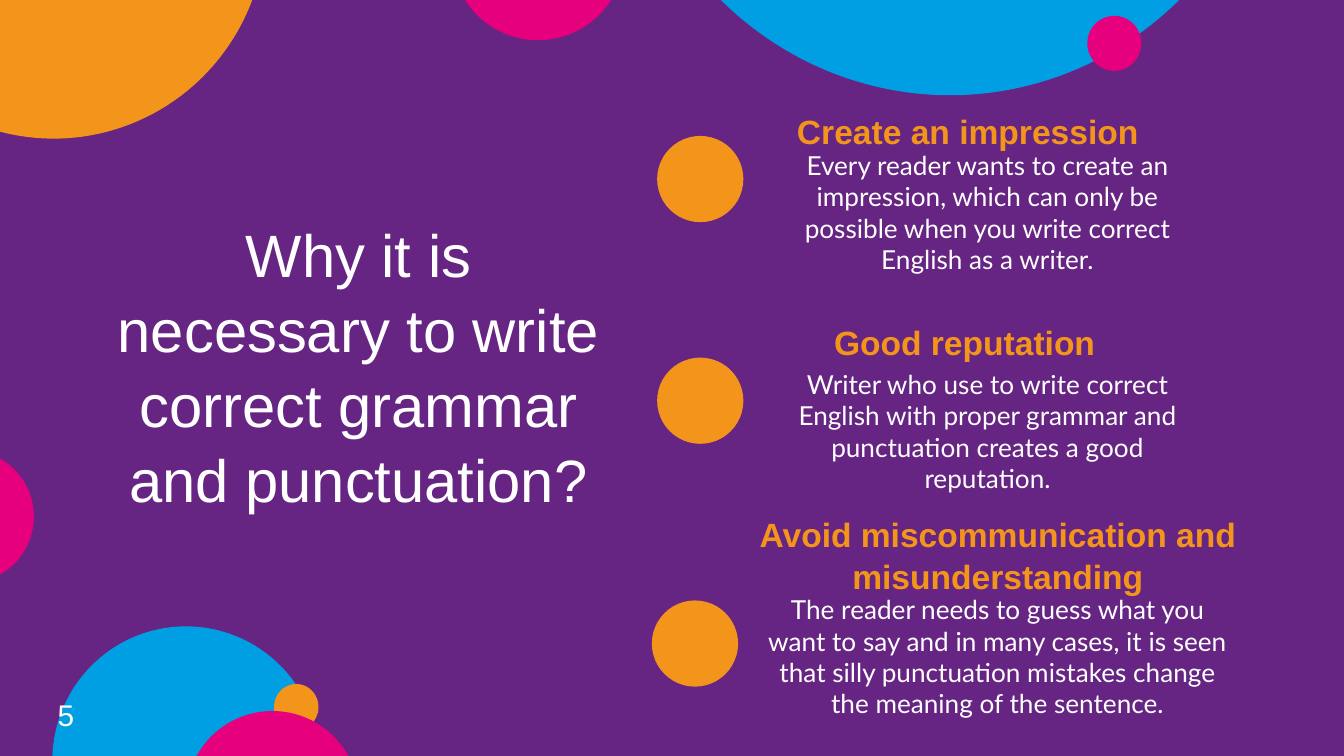
"""Build the slide on why correct grammar and punctuation are necessary."""

from pptx import Presentation
from pptx.dml.color import RGBColor
from pptx.enum.shapes import MSO_SHAPE as Shape
from pptx.enum.text import MSO_ANCHOR as Anchor, PP_ALIGN as Align
from pptx.util import Cm, Pt

COLORS = {
    "purple": "662483",
    "pink": "E6007E",
    "orange": "F4951B",
    "blue": "009FE3",
    "white": "FFFFFF",
}

DECORATIONS = [
    ("pink", (8.53, -2.54, 3.28, 3.3)),
    ("pink", (-1.85, 8.51, 2.49, 2.51)),
    ("orange", (-3, -5.51, 8.03, 8.13)),
    ("blue", (0.99, 11.84, 5.05, 5.08)),
    ("orange", (5.18, 12.93, 0.84, 0.87)),
    ("blue", (11.68, -11.23, 12.55, 13.03)),
    ("pink", (20.55, 0.3, 1.02, 1.04)),
    ("pink", (3.51, 13.44, 3.28, 3.3)),
]

TITLE = "Why it is necessary to write correct grammar and punctuation?"
TITLE_BOX = (1.93, 5.05, 9.7, 5.03)
PAGE_NUMBER = "5"
PAGE_NUMBER_BOX = (0.84, 13.03, 0.84, 0.94)

REASONS = [
    {
        "heading": "Create an impression ",
        "heading_box": (14.61, 1.8, 7.54, 1.04),
        "heading_inset": 0.25,
        "body": "Every reader wants to create an impression, which can only be "
                "possible when you write correct English as a writer.",
        "body_box": (14.55, 2.57, 8.23, 1.9),
        "marker": (12.42, 2.57),
    },
    {
        "heading": "Good reputation ",
        "heading_box": (14.55, 5.79, 7.54, 1.04),
        "heading_inset": 0.25,
        "body": "Writer who use to write correct English with proper grammar and "
                "punctuation creates a good reputation.",
        "body_box": (14.55, 6.71, 8.23, 1.9),
        "marker": (12.42, 6.76),
    },
    {
        "heading": "Avoid miscommunication and misunderstanding",
        "heading_box": (12.32, 9.55, 13.08, 1.8),
        "heading_inset": 0.13,
        "body": "The reader needs to guess what you want to say and in many cases, "
                "it is seen that silly punctuation mistakes change the meaning of "
                "the sentence.",
        "body_box": (14.17, 10.97, 9.37, 1.12),
        "marker": (12.32, 11.35),
    },
]
MARKER_SIZE = 1.63


def color(name):
    return RGBColor.from_string(COLORS[name])


def add_circle(slide, fill, box):
    shape = slide.shapes.add_shape(Shape.OVAL, *map(Cm, box))
    shape.shadow.inherit = False
    shape.fill.solid()
    shape.fill.fore_color.rgb = color(fill)
    shape.line.fill.background()


def add_text(slide, text, box, size, font="Arial", fill="white", bold=False,
             align=Align.CENTER, anchor=Anchor.TOP, inset=0.25,
             bottom_inset=0.25, spacing=1, wrap=True):
    frame = slide.shapes.add_textbox(*map(Cm, box)).text_frame
    frame.word_wrap = wrap
    frame.vertical_anchor = anchor
    frame.margin_left = frame.margin_right = Cm(0.25)
    frame.margin_top, frame.margin_bottom = Cm(inset), Cm(bottom_inset)
    paragraph = frame.paragraphs[0]
    paragraph.text = text
    paragraph.alignment = align
    paragraph.line_spacing = spacing
    paragraph.font.name = font
    paragraph.font.size = Pt(size)
    paragraph.font.bold = bold
    paragraph.font.color.rgb = color(fill)


def main():
    presentation = Presentation()
    presentation.slide_width, presentation.slide_height = Cm(25.4), Cm(14.29)
    slide = presentation.slides.add_slide(presentation.slide_layouts[6])
    slide.background.fill.solid()
    slide.background.fill.fore_color.rgb = color("purple")

    for fill, box in DECORATIONS:
        add_circle(slide, fill, box)
    add_text(slide, TITLE, TITLE_BOX, 32, anchor=Anchor.MIDDLE,
             bottom_inset=1.6, spacing=1.05)
    for reason in REASONS:
        add_circle(slide, "orange", (*reason["marker"], MARKER_SIZE, MARKER_SIZE))
        add_text(slide, reason["body"], reason["body_box"], 14, font="Lato")
        add_text(slide, reason["heading"], reason["heading_box"], 18,
                 fill="orange", bold=True, inset=reason["heading_inset"],
                 spacing=1.05)
    add_text(slide, PAGE_NUMBER, PAGE_NUMBER_BOX, 16, align=Align.LEFT,
             inset=0.13, bottom_inset=0.13, wrap=False)
    presentation.save("out.pptx")


if __name__ == "__main__":
    main()
